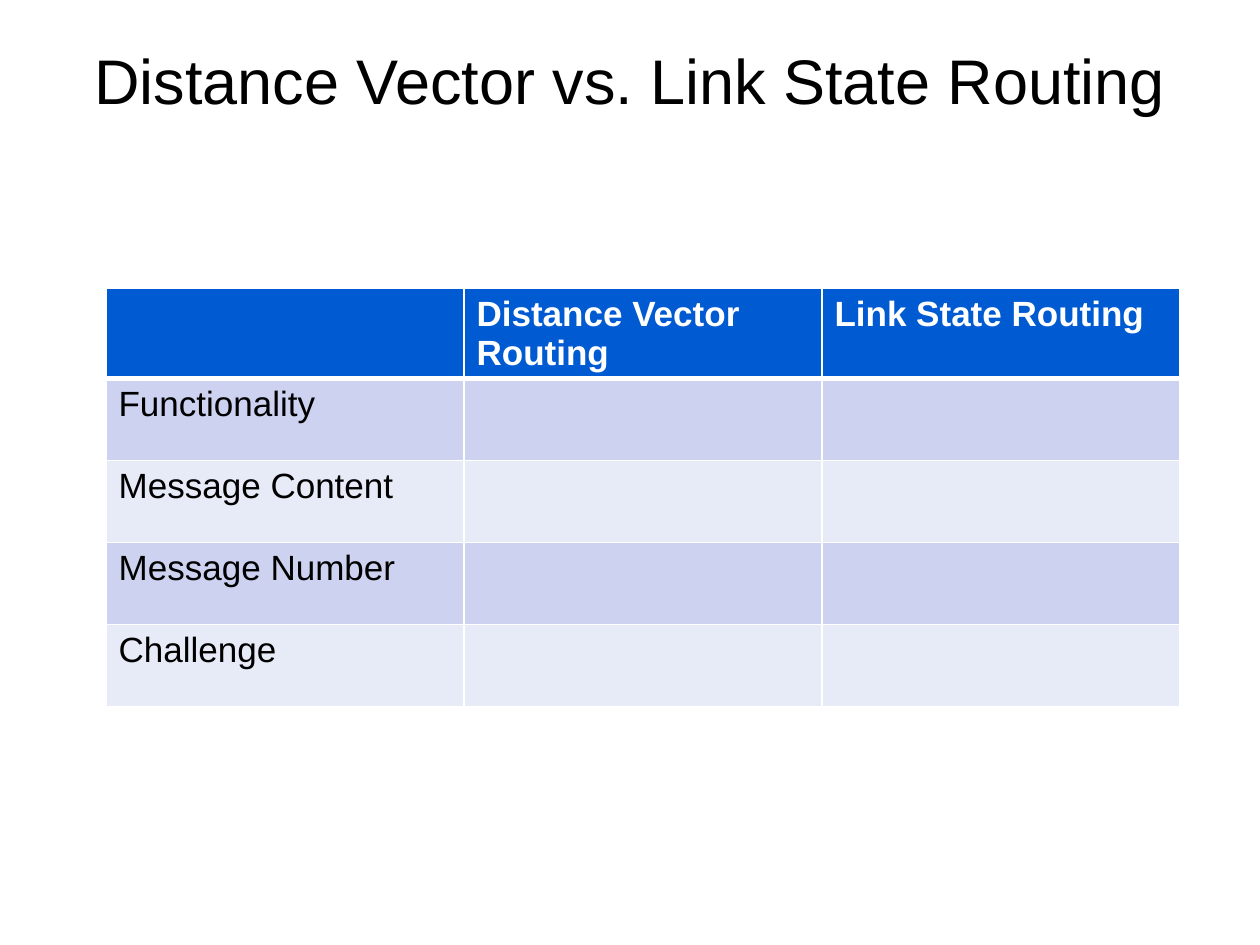
"""Build the routing comparison slide: a title above an empty comparison table."""
from pptx import Presentation
from pptx.dml.color import RGBColor
from pptx.enum.text import MSO_ANCHOR, PP_ALIGN
from pptx.oxml.ns import qn
from pptx.util import Pt
from lxml.etree import SubElement

PX = 914400 // 126
FONT = "Arial"
BLACK = RGBColor(0x00, 0x00, 0x00)
WHITE = RGBColor(0xFF, 0xFF, 0xFF)
HEADER_BLUE = RGBColor(0x00, 0x5B, 0xD3)
BANDS = (RGBColor(0xE7, 0xEA, 0xF7), RGBColor(0xCC, 0xD2, 0xEF))

HEADINGS = ("", "Distance Vector Routing", "Link State Routing")
TOPICS = ("Functionality", "Message Content", "Message Number", "Challenge")


def px(*lengths):
    return [length * PX for length in lengths]


def write(tf, text, size=20, color=BLACK, bold=False, align=PP_ALIGN.LEFT):
    p = tf.paragraphs[0]
    p.alignment = align
    p.font.size = Pt(size)
    if not text:
        return
    r = p.add_run()
    r.text = text
    r.font.name = FONT
    r.font.size = Pt(size)
    r.font.bold = bold
    r.font.color.rgb = color


def add_title(s, text):
    sp = s.shapes.title
    sp.left, sp.top, sp.width, sp.height = px(0, 0, 1260, 158)
    tf = sp.text_frame
    tf.word_wrap = True
    tf.vertical_anchor = MSO_ANCHOR.MIDDLE
    write(tf, text, size=36, align=PP_ALIGN.CENTER)


def set_borders(cell, top=1, bottom=1):
    tc_pr = cell._tc.get_or_add_tcPr()
    for side, width in (("L", 1), ("R", 1), ("T", top), ("B", bottom)):
        ln = SubElement(tc_pr, qn(f"a:ln{side}"), w=str(Pt(width)))
        fill = SubElement(ln, qn("a:solidFill"))
        SubElement(fill, qn("a:srgbClr"), val=str(WHITE))


def style_cell(cell, row, text):
    header = row == 0
    set_borders(cell, top=3 if row == 1 else 1, bottom=3 if header else 1)
    cell.fill.solid()
    cell.fill.fore_color.rgb = HEADER_BLUE if header else BANDS[row % 2]
    write(cell.text_frame, text, color=WHITE if header else BLACK, bold=header)


def add_comparison(s, rows):
    frame = s.shapes.add_table(len(rows), len(HEADINGS), *px(106, 288, 1074, 410))
    table = frame.table
    for column in table.columns:
        column.width = 358 * PX
    for i, texts in enumerate(rows):
        table.rows[i].height = 82 * PX
        for j, text in enumerate(texts):
            style_cell(table.cell(i, j), i, text)


def main():
    prs = Presentation()
    prs.slide_width, prs.slide_height = px(1260, 945)
    s = prs.slides.add_slide(prs.slide_layouts[5])
    add_title(s, "Distance Vector vs. Link State Routing")
    add_comparison(s, [HEADINGS] + [(topic, "", "") for topic in TOPICS])
    prs.save("out.pptx")


if __name__ == "__main__":
    main()
